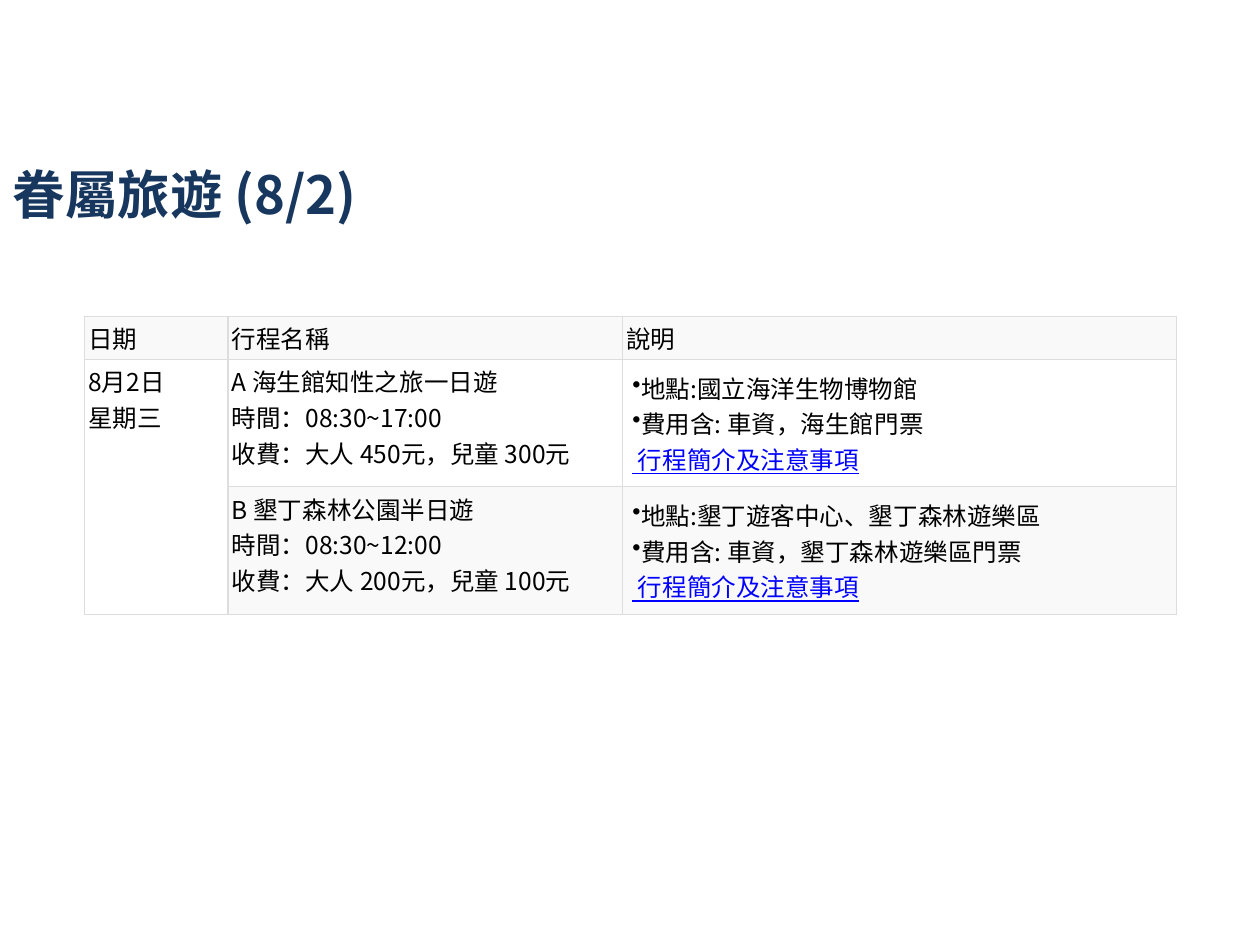
from copy import deepcopy
from dataclasses import dataclass

from lxml.etree import SubElement
from pptx import Presentation
from pptx.dml.color import RGBColor
from pptx.enum.text import MSO_ANCHOR, MSO_AUTO_SIZE, PP_ALIGN
from pptx.oxml.ns import qn
from pptx.util import Inches, Pt

FONT = "Noto Sans CJK SC"
NAVY = RGBColor(0x17, 0x37, 0x5E)
BLACK = RGBColor(0, 0, 0)
LINK_BLUE = RGBColor(0, 0, 0xFF)
WHITE = RGBColor(0xFF, 0xFF, 0xFF)
PALE_GREY = RGBColor(0xF9, 0xF9, 0xF9)
BORDER_GREY = RGBColor(0xDD, 0xDD, 0xDD)

COLUMN_WIDTHS = (1.14, 3.13, 4.4)
ROW_HEIGHTS = (0.22, 0.94, 0.79)
HEADINGS = ("日期", "行程名稱", "說明")
LINK_TEXT = " 行程簡介及注意事項"


@dataclass
class Tour:
    name: str
    hours: str
    fee: str
    place: str
    included: str
    fill: RGBColor


TOURS = (
    Tour("A 海生館知性之旅一日遊", "08:30~17:00", "大人 450元，兒童 300元",
         "國立海洋生物博物館", "車資，海生館門票", WHITE),
    Tour("B 墾丁森林公園半日遊", "08:30~12:00", "大人 200元，兒童 100元",
         "墾丁遊客中心、墾丁森林遊樂區", "車資，墾丁森林遊樂區門票", PALE_GREY),
)


def style_run(run, size: float, color: RGBColor, bold: bool = False) -> None:
    run.font.size = Pt(size)
    run.font.name = FONT
    run.font.bold = bold
    run.font.color.rgb = color
    SubElement(run.font._element, qn("a:ea"), typeface=FONT)


def add_borders(cell) -> None:
    properties = cell._tc.get_or_add_tcPr()
    for side in ("lnL", "lnR", "lnT", "lnB"):
        line = SubElement(properties, qn(f"a:{side}"), w=str(Pt(0.75)))
        fill = SubElement(line, qn("a:solidFill"))
        SubElement(fill, qn("a:srgbClr"), val=str(BORDER_GREY))


def add_bullet(paragraph) -> None:
    properties = paragraph._p.get_or_add_pPr()
    properties.set("marL", "0")
    properties.set("indent", str(Inches(-0.19)))
    SubElement(properties, qn("a:buChar"), char="•")


def fill_cell(cell, lines: list[str], fill: RGBColor,
              inset: float = 0.03, bulleted: bool = False) -> None:
    cell.margin_left = cell.margin_right = Inches(inset)
    cell.margin_top = cell.margin_bottom = Inches(inset)
    cell.fill.solid()
    cell.fill.fore_color.rgb = fill
    cell.text_frame.text = "\n".join(lines)
    for paragraph in cell.text_frame.paragraphs:
        if bulleted:
            add_bullet(paragraph)
        for run in paragraph.runs:
            is_link = run.text == LINK_TEXT
            style_run(run, 14, LINK_BLUE if is_link else BLACK)
            run.font.underline = is_link
        # A line break takes the size of the text before it
        for line_break in paragraph._p.findall(qn("a:br")):
            line_break.append(deepcopy(paragraph.runs[0].font._element))


def add_title(slide, text: str) -> None:
    title = slide.shapes.title
    title.left, title.top = Inches(0), Inches(1.31)
    title.width, title.height = Inches(9.18), Inches(0.79)
    frame = title.text_frame
    frame.text = text
    frame.auto_size = MSO_AUTO_SIZE.NONE
    frame.vertical_anchor = MSO_ANCHOR.TOP
    frame.margin_top = Inches(0.03)
    paragraph = frame.paragraphs[0]
    paragraph.alignment = PP_ALIGN.LEFT
    paragraph.line_spacing = 0.9
    style_run(paragraph.runs[0], 30, NAVY, bold=True)


def add_tour_table(slide) -> None:
    frame = slide.shapes.add_table(
        len(ROW_HEIGHTS), len(COLUMN_WIDTHS), Inches(0.67), Inches(2.51),
        Inches(sum(COLUMN_WIDTHS)), Inches(sum(ROW_HEIGHTS)))
    table = frame.table
    for column, width in zip(table.columns, COLUMN_WIDTHS):
        column.width = Inches(width)
    for row, height in zip(table.rows, ROW_HEIGHTS):
        row.height = Inches(height)
    for cell in table.iter_cells():
        add_borders(cell)

    # Heading row
    for column, heading in enumerate(HEADINGS):
        fill_cell(table.cell(0, column), [heading], PALE_GREY)

    # One date for both tours
    table.cell(1, 0).merge(table.cell(2, 0))
    fill_cell(table.cell(1, 0), ["8月2日", "星期三"], WHITE)

    # Tour rows
    for row, tour in enumerate(TOURS, start=1):
        fill_cell(table.cell(row, 1),
                  [tour.name, f"時間：{tour.hours}", f"收費：{tour.fee}"], tour.fill)
        fill_cell(table.cell(row, 2),
                  [f"地點:{tour.place}", f"費用含: {tour.included}\v{LINK_TEXT}"],
                  tour.fill, inset=0.08, bulleted=True)


def main() -> None:
    presentation = Presentation()
    presentation.slide_width, presentation.slide_height = Inches(10), Inches(7.5)
    slide = presentation.slides.add_slide(presentation.slide_layouts[5])
    add_title(slide, "眷屬旅遊 (8/2)")
    add_tour_table(slide)
    presentation.save("out.pptx")


if __name__ == "__main__":
    main()
